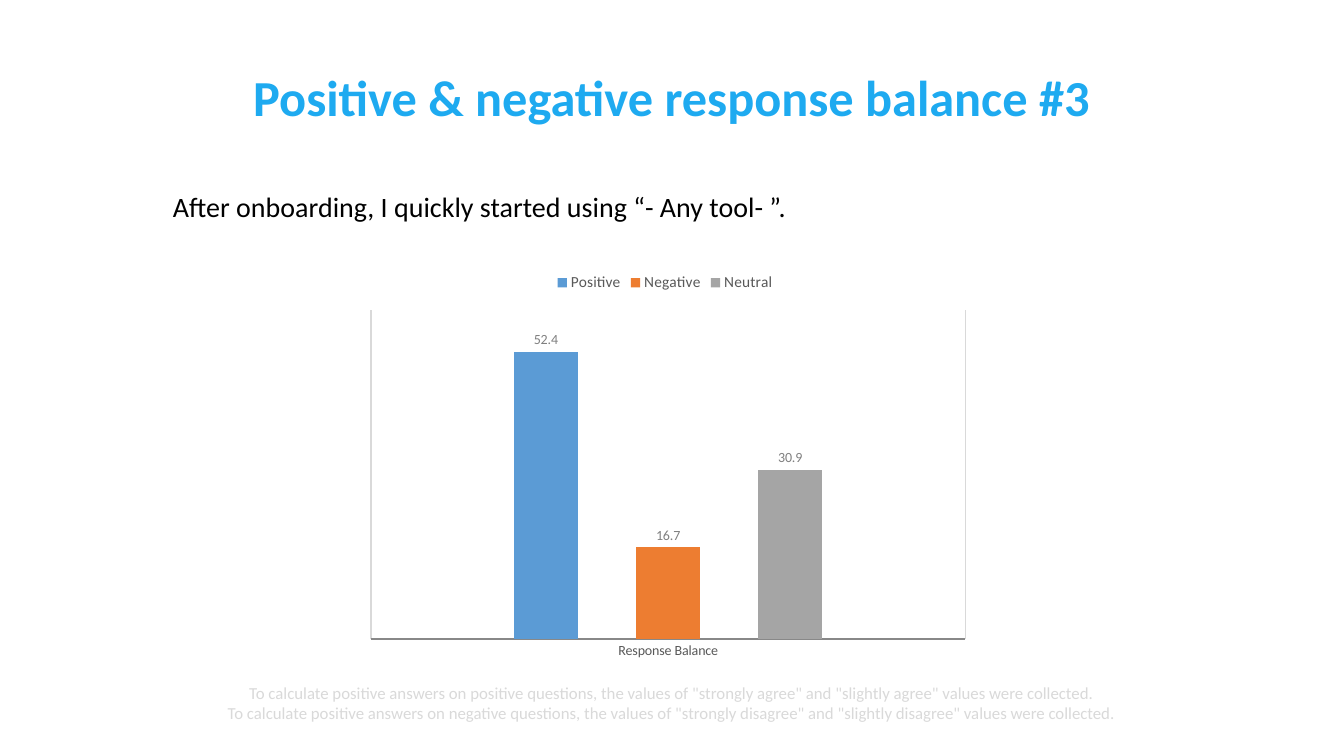
from lxml import etree
from pptx import Presentation
from pptx import util as u
from pptx.chart.data import CategoryChartData
from pptx.dml.color import RGBColor
from pptx.enum import chart as chart_enum
from pptx.enum import text
from pptx.oxml import parse_xml
from pptx.oxml.ns import nsdecls, qn

FONT = "Calibri"
RESPONSES = [
    ("Positive", 52.4, "5B9BD5"),
    ("Negative", 16.7, "ED7D31"),
    ("Neutral", 30.9, "A5A5A5"),
]
NOTES = [
    'To calculate positive answers on positive questions, the values of "strongly agree" and "slightly agree" values were collected.',
    'To calculate positive answers on negative questions, the values of "strongly disagree" and "slightly disagree" values were collected.',
]


def color(value):
    return RGBColor.from_string(value)


def format_font(font, size, hex_color, bold=False):
    font.name = FONT
    font.size = u.Pt(size)
    font.bold = bold
    font.color.rgb = color(hex_color)


def place(shape, left, top, width, height):
    shape.left, shape.top = u.Cm(left), u.Cm(top)
    shape.width, shape.height = u.Cm(width), u.Cm(height)


def write_text(shape, lines, size, hex_color, bold=False, align="LEFT",
               anchor="TOP", line_spacing=1.0, space_before=0):
    frame = shape.text_frame
    frame.word_wrap = True
    frame.auto_size = text.MSO_AUTO_SIZE.NONE
    frame.vertical_anchor = getattr(text.MSO_ANCHOR, anchor)
    for side in ("left", "top", "right", "bottom"):
        setattr(frame, f"margin_{side}", u.Cm(0.13))
    frame.text = "\n".join(lines)
    for paragraph in frame.paragraphs:
        paragraph.alignment = getattr(text.PP_ALIGN, align)
        paragraph.line_spacing = line_spacing
        paragraph.space_before = u.Pt(space_before)
        format_font(paragraph.runs[0].font, size, hex_color, bold)


def add_text(slide, box, lines, **text_format):
    shape = slide.shapes.add_textbox(*map(u.Cm, box))
    write_text(shape, lines, **text_format)


def set_plot_layout(chart, left, top, width, height):
    plot_area = chart.element.find(".//" + qn("c:plotArea"))
    for layout in plot_area.findall(qn("c:layout")):
        plot_area.remove(layout)
    layout = parse_xml(f"<c:layout {nsdecls('c')}/>")
    manual = etree.SubElement(layout, qn("c:manualLayout"))
    settings = [("layoutTarget", "inner"), ("xMode", "edge"), ("yMode", "edge"),
                ("x", left), ("y", top), ("w", width), ("h", height)]
    for name, value in settings:
        etree.SubElement(manual, qn(f"c:{name}"), val=str(value))
    plot_area.insert(0, layout)


def format_line(line, hex_color):
    line.color.rgb = color(hex_color)
    line.width = u.Pt(1)


def format_axes(chart):
    category_axis, value_axis = chart.category_axis, chart.value_axis
    for axis in (category_axis, value_axis):
        axis.major_tick_mark = chart_enum.XL_TICK_MARK.NONE
        axis.minor_tick_mark = chart_enum.XL_TICK_MARK.NONE
    category_axis.has_major_gridlines = True
    format_line(category_axis.major_gridlines.format.line, "D9D9D9")
    format_line(category_axis.format.line, "888888")
    format_font(category_axis.tick_labels.font, 10, "595959")
    value_axis.has_major_gridlines = False
    value_axis.tick_label_position = chart_enum.XL_TICK_LABEL_POSITION.NONE
    value_axis.format.line.fill.background()
    value_axis.minimum_scale = 0
    value_axis.maximum_scale = 60
    value_axis.major_unit = 15


def format_series(series, hex_color):
    series.format.fill.solid()
    series.format.fill.fore_color.rgb = color(hex_color)
    labels = series.data_labels
    labels.show_value = True
    labels.position = chart_enum.XL_LABEL_POSITION.OUTSIDE_END
    labels.number_format = "0.#"
    labels.number_format_is_linked = False
    format_font(labels.font, 10, "808080")


def add_response_chart(slide, box):
    data = CategoryChartData(number_format="0.#")
    data.categories = ["Response Balance"]
    for name, value, _ in RESPONSES:
        data.add_series(name, [value])
    chart = slide.shapes.add_chart(
        chart_enum.XL_CHART_TYPE.COLUMN_CLUSTERED, *map(u.Cm, box), data).chart
    format_font(chart.font, 10, "000000")
    chart.has_title = False
    chart.has_legend = True
    chart.legend.position = chart_enum.XL_LEGEND_POSITION.TOP
    chart.legend.include_in_layout = True
    format_font(chart.legend.font, 11, "595959")
    plot = chart.plots[0]
    plot.gap_width = 444
    plot.overlap = -90
    plot.vary_by_categories = False
    for series, (_, _, hex_color) in zip(plot.series, RESPONSES):
        format_series(series, hex_color)
    format_axes(chart)
    set_plot_layout(chart, 0.02, 0.12, 0.97, 0.82)


def main():
    presentation = Presentation()
    presentation.slide_width = u.Cm(33.87)
    presentation.slide_height = u.Cm(19.05)
    slide = presentation.slides.add_slide(presentation.slide_layouts[5])
    title = slide.shapes.title
    place(title, 4.23, 1.7, 25.4, 1.65)
    write_text(title, ["Positive & negative response balance #3"], size=36,
               hex_color="1EAAF0", bold=True, align="CENTER", anchor="BOTTOM",
               line_spacing=0.9)
    add_text(slide, (4.23, 4.23, 25.4, 3.81),
             ["After onboarding, I quickly started using “- Any tool- ”."],
             size=20, hex_color="000000", line_spacing=1.5, space_before=10)
    add_response_chart(slide, (9.04, 6.6, 15.44, 10.11))
    add_text(slide, (0.13, 17.09, 33.6, 1.22), NOTES, size=12,
             hex_color="D9D9D9", align="CENTER", anchor="MIDDLE")
    presentation.save("out.pptx")


if __name__ == "__main__":
    main()
